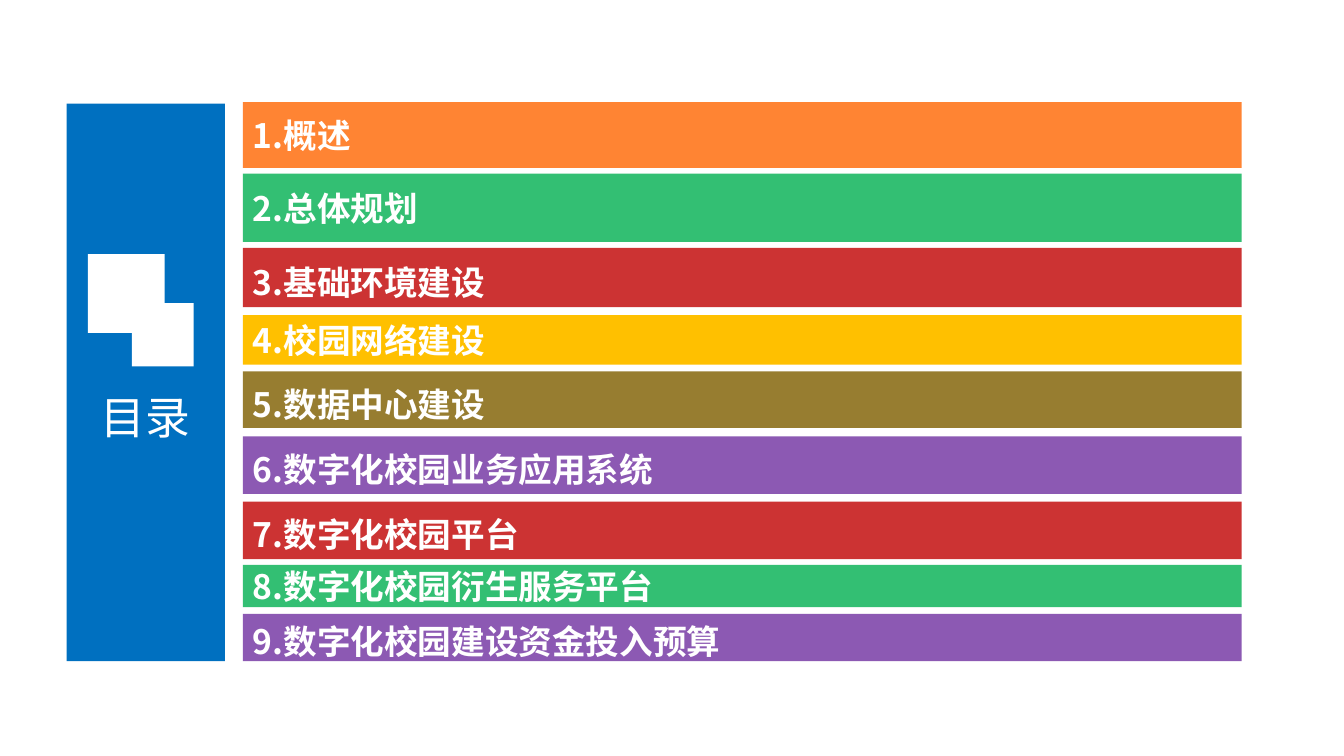
from lxml import etree
from pptx import Presentation
from pptx.dml.color import RGBColor
from pptx.enum.shapes import MSO_SHAPE
from pptx.enum.text import MSO_ANCHOR, MSO_AUTO_SIZE, PP_ALIGN
from pptx.oxml.ns import qn
from pptx.util import Pt

RECTANGLE = MSO_SHAPE.RECTANGLE
MIDDLE = MSO_ANCHOR.MIDDLE
NO_AUTOFIT = MSO_AUTO_SIZE.NONE
LEFT, CENTER = PP_ALIGN.LEFT, PP_ALIGN.CENTER

TYPEFACE = "Noto Sans CJK SC"
WHITE, BLUE = "FFFFFF", "0070C0"
BAR_LEFT, BAR_WIDTH = 173.4, 713.5

# Chapter: top, height, colour, opacity in percent, line spacing
CHAPTERS = {
    "1.概述": (72.9, 47.1, "FF6600", 80, 1.0),
    "2.总体规划": (124.1, 48.6, "00B050", 80, 1.0),
    "3.基础环境建设": (177, 42.5, "C00000", 80, 1.2),
    "4.校园网络建设": (225, 35.4, "FFC000", 100, 1.0),
    "5.数据中心建设": (265.3, 40.4, "806000", 81, 1.2),
    "6.数字化校园业务应用系统": (311.8, 41.1, "7030A0", 80, 1.2),
    "7.数字化校园平台": (358.4, 41, "C00000", 80, 1.2),
    "8.数字化校园衍生服务平台": (403.4, 30.3, "00B050", 80, 1.0),
    "9.数字化校园建设资金投入预算": (438.5, 33.7, "7030A0", 80, 1.2),
}

# White squares on the panel: left, top, width, height
SQUARES = [(94.3, 216.6, 44, 45.1), (62.8, 181.6, 54.8, 56.3)]


def set_values(target, values):
    for name, value in values.items():
        setattr(target, name, value)


def rgb(color):
    return RGBColor.from_string(color)


def fill_solid(shape, color, opacity=100):
    shape.fill.solid()
    shape.fill.fore_color.rgb = rgb(color)
    if opacity < 100:
        color_element = shape.fill._xPr.find(qn("a:solidFill"))[0]
        alpha = etree.SubElement(color_element, qn("a:alpha"))
        alpha.set("val", str(opacity * 1000))


def add_block(slide, left, top, width, height, color, opacity=100):
    block = slide.shapes.add_shape(
        RECTANGLE, Pt(left), Pt(top), Pt(width), Pt(height))
    block.shadow.inherit = False
    block.line.fill.background()
    fill_solid(block, color, opacity)
    return block


def write_text(shape, text, size, bold, alignment, spacing=1.0, top_inset=3.6):
    frame = shape.text_frame
    set_values(frame, {
        "word_wrap": True, "auto_size": NO_AUTOFIT,
        "vertical_anchor": MIDDLE, "margin_top": Pt(top_inset)})
    paragraph = frame.paragraphs[0]
    set_values(paragraph, {"alignment": alignment, "line_spacing": spacing})
    run = paragraph.add_run()
    run.text = text
    set_values(run.font, {"name": TYPEFACE, "size": Pt(size), "bold": bold})
    run.font.color.rgb = rgb(WHITE)
    # East Asian typeface follows the Latin one
    latin = run.font._element.find(qn("a:latin"))
    east_asian = etree.Element(qn("a:ea"), typeface=TYPEFACE)
    latin.addnext(east_asian)


def add_contents_panel(slide):
    panel = slide.shapes.title
    set_values(panel, {"left": Pt(47.6), "top": Pt(74),
                       "width": Pt(113.1), "height": Pt(398.2)})
    fill_solid(panel, BLUE)
    write_text(panel, "目录", 32, False, CENTER, top_inset=52.4)
    for square in SQUARES:
        add_block(slide, *square, WHITE)


def add_chapter_bar(slide, chapter, top, height, color, opacity, spacing):
    bar = add_block(slide, BAR_LEFT, top, BAR_WIDTH, height, color, opacity)
    write_text(bar, chapter, 24, True, LEFT, spacing)


def main():
    deck = Presentation()
    set_values(deck, {"slide_width": Pt(960), "slide_height": Pt(540)})
    title_only = deck.slide_layouts[5]
    slide = deck.slides.add_slide(title_only)

    # Panel with the heading
    add_contents_panel(slide)

    # Chapter bars
    for chapter, values in CHAPTERS.items():
        add_chapter_bar(slide, chapter, *values)

    deck.save("out.pptx")


if __name__ == "__main__":
    main()
